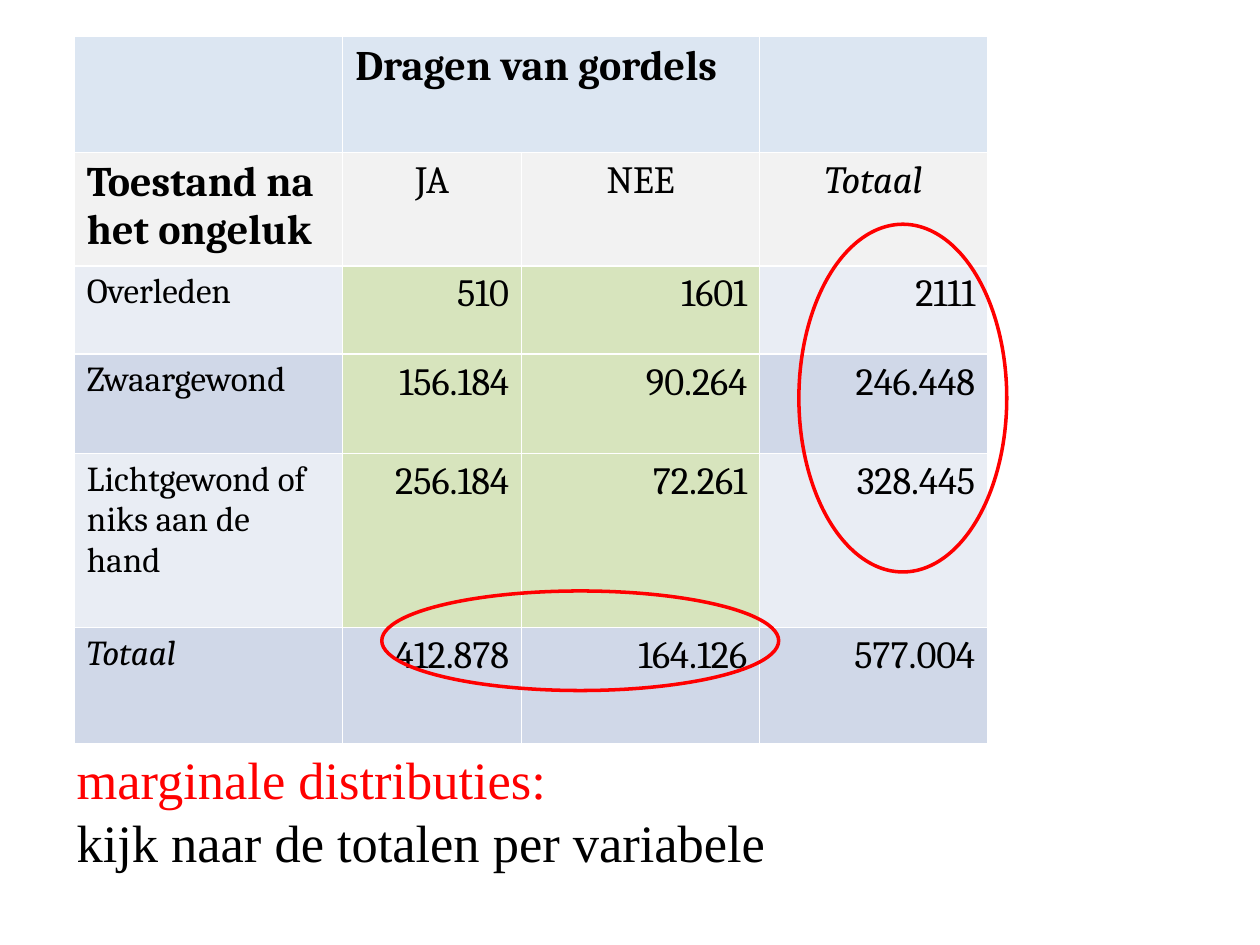
from pptx import Presentation
from pptx.dml.color import RGBColor
from pptx.enum.shapes import MSO_SHAPE as Shape
from pptx.enum.text import MSO_AUTO_SIZE as AutoSize, PP_ALIGN as Align
from pptx.util import Inches, Pt

COLUMNS = [2.13, 1.42, 1.89, 1.81]
ROWS = [0.92, 0.9, 0.7, 0.79, 1.38, 0.92]
COUNTS = [
    ["", "Dragen van gordels", "", ""],
    ["Toestand na het ongeluk", "JA", "NEE", "Totaal"],
    ["Overleden", "510", "1601", "2111"],
    ["Zwaargewond", "156.184", "90.264", "246.448"],
    ["Lichtgewond of\nniks aan de hand", "256.184", "72.261", "328.445"],
    ["Totaal", "412.878", "164.126", "577.004"],
]
HEADING, SUBHEADING, INNER = "DCE6F2", "F2F2F2", "D7E4BD"
BANDS = ["E9EDF4", "D0D8E8"]
RED, BLACK = "FF0000", "000000"


def color(hex_code):
    return RGBColor.from_string(hex_code)


def cell_fill(row, col):
    if row < 2:
        return (HEADING, SUBHEADING)[row]
    if row < len(ROWS) - 1 and col in (1, 2):
        return INNER
    return BANDS[row % 2]


def cell_style(row, col):
    """Return size, bold, and alignment by role in the cross table."""
    if row == 0 or (row, col) == (1, 0):
        return 24, True, Align.LEFT
    if row == 1:
        return 22, False, Align.CENTER
    return (20, False, Align.LEFT) if col == 0 else (22, False, Align.RIGHT)


def add_cross_table(slide, left, top):
    table = slide.shapes.add_table(
        len(ROWS), len(COLUMNS), Inches(left), Inches(top),
        Inches(sum(COLUMNS)), Inches(sum(ROWS))).table
    for column, width in zip(table.columns, COLUMNS):
        column.width = Inches(width)
    for row, height in zip(table.rows, ROWS):
        row.height = Inches(height)
    table.cell(0, 1).merge(table.cell(0, 2))
    for r, values in enumerate(COUNTS):
        for c, value in enumerate(values):
            cell = table.cell(r, c)
            cell.fill.solid()
            cell.fill.fore_color.rgb = color(cell_fill(r, c))
            cell.text = value
            size, bold, align = cell_style(r, c)
            for line in cell.text_frame.paragraphs:
                line.alignment = align
                font = line.font
                font.name, font.size, font.bold = "Cambria", Pt(size), bold
                font.italic = value == "Totaal"
                font.color.rgb = color(BLACK)


def circle_totals(slide, left, top, width, height):
    ring = slide.shapes.add_shape(
        Shape.OVAL, Inches(left), Inches(top), Inches(width), Inches(height))
    ring.shadow.inherit = False
    ring.fill.background()
    ring.line.color.rgb = color(RED)
    ring.line.width = Pt(2)


def add_explanation(slide, left, top, width, height):
    frame = slide.shapes.add_textbox(
        Inches(left), Inches(top), Inches(width), Inches(height)).text_frame
    frame.word_wrap = False
    frame.auto_size = AutoSize.SHAPE_TO_FIT_TEXT
    frame.text = "marginale distributies:\nkijk naar de totalen per variabele"
    for line, ink in zip(frame.paragraphs, (RED, BLACK)):
        line.font.name, line.font.size = "Times New Roman", Pt(30)
        line.font.color.rgb = color(ink)


def main():
    deck = Presentation()
    deck.slide_width, deck.slide_height = Inches(10), Inches(7.5)
    slide = deck.slides.add_slide(deck.slide_layouts[6])
    left, top = 0.59, 0.29
    add_cross_table(slide, left, top)
    # Rings sit around the column totals and the row totals.
    circle_totals(slide, left + COLUMNS[0] + 0.31, top + sum(ROWS[:-1]) - 0.29,
                  sum(COLUMNS[1:3]) - 0.16, 0.79)
    add_explanation(slide, 0.51, 5.88, 5.74, 1.11)
    circle_totals(slide, left + sum(COLUMNS[:3]) + 0.31,
                  top + sum(ROWS[:2]) - 0.33, 1.65, 2.76)
    deck.save("out.pptx")


if __name__ == "__main__":
    main()
